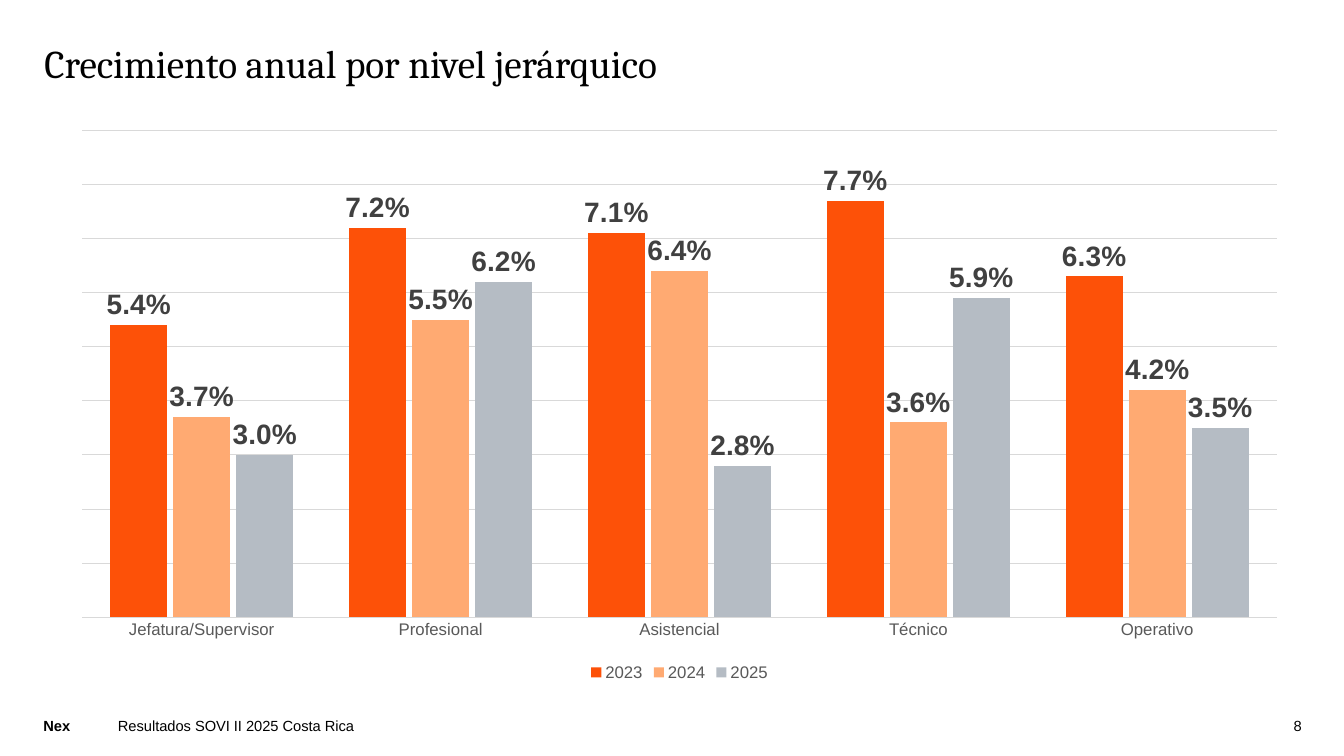
"""Build the slide on yearly growth by job level."""
from dataclasses import dataclass

import pptx
import pptx.chart.chart
import pptx.chart.data
import pptx.dml.color
import pptx.enum.chart
import pptx.enum.text
import pptx.oxml
import pptx.oxml.ns
import pptx.slide
import pptx.text.text
import pptx.util

RGBColor = pptx.dml.color.RGBColor
BLACK = RGBColor(0x00, 0x00, 0x00)
LABEL_GRAY = RGBColor(0x40, 0x40, 0x40)
AXIS_GRAY = RGBColor(0x59, 0x59, 0x59)
GRID_GRAY = RGBColor(0xD9, 0xD9, 0xD9)
ORANGE = RGBColor(0xFD, 0x51, 0x08)
PEACH = RGBColor(0xFF, 0xAA, 0x72)
SILVER = RGBColor(0xB5, 0xBC, 0xC4)

SLIDE_WIDTH = pptx.util.Inches(13.33)
SLIDE_HEIGHT = pptx.util.Inches(7.5)
COLUMN = SLIDE_WIDTH / 100
ROW = SLIDE_HEIGHT / 100
FOOTER_ROW, FOOTER_ROWS = 94.8, 2.4
PERCENT_FORMAT = "0.0%"

Align = pptx.enum.text.PP_ALIGN
Anchor = pptx.enum.text.MSO_ANCHOR


@dataclass(frozen=True)
class Area:
    column: float
    row: float
    columns: float
    rows: float

    def box(self) -> tuple[int, int, int, int]:
        return (round(self.column * COLUMN), round(self.row * ROW),
                round(self.columns * COLUMN), round(self.rows * ROW))


@dataclass(frozen=True)
class Label:
    text: str
    area: Area
    size: float = 10.5
    font: str = "Arial"
    bold: bool = False
    anchor: Anchor = Anchor.BOTTOM
    align: Align = Align.LEFT
    line_spacing: float = 1.0


@dataclass(frozen=True)
class YearSeries:
    year: str
    growth: tuple[float, ...]
    color: RGBColor


LABELS = (
    Label("Nex", Area(3.23, FOOTER_ROW, 3.53, FOOTER_ROWS), bold=True, anchor=Anchor.TOP),
    Label("Crecimiento anual por nivel jerárquico", Area(3.3, 5.87, 93.55, 13.33),
          size=28, font="Cambria", anchor=Anchor.TOP, line_spacing=0.9),
    Label("Resultados SOVI II 2025 Costa Rica", Area(8.78, FOOTER_ROW, 72.32, FOOTER_ROWS)),
    Label("8", Area(94.37, FOOTER_ROW, 2.48, FOOTER_ROWS), align=Align.RIGHT),
)
CHART_AREA = Area(4.28, 15.73, 92.57, 74.93)
PLOT_SHARES = {"x": 0.02, "y": 0.02, "w": 0.96, "h": 0.86}
LEVELS = ("Jefatura/Supervisor", "Profesional", "Asistencial", "Técnico", "Operativo")
YEARS = (
    YearSeries("2023", (0.054, 0.072, 0.071, 0.077, 0.063), ORANGE),
    YearSeries("2024", (0.037, 0.055, 0.064, 0.036, 0.042), PEACH),
    YearSeries("2025", (0.03, 0.062, 0.028, 0.059, 0.035), SILVER),
)


def style_font(font: pptx.text.text.Font, size: float, color: RGBColor,
               name: str = "Arial", bold: bool = False) -> None:
    font.name = name
    font.size = pptx.util.Pt(size)
    font.bold = bold
    font.color.rgb = color


def add_label(slide: pptx.slide.Slide, label: Label) -> None:
    text_frame = slide.shapes.add_textbox(*label.area.box()).text_frame
    text_frame.margin_left = text_frame.margin_right = 0
    text_frame.margin_top = text_frame.margin_bottom = 0
    text_frame.word_wrap = True
    text_frame.vertical_anchor = label.anchor
    text_frame.text = label.text
    paragraph = text_frame.paragraphs[0]
    paragraph.alignment = label.align
    paragraph.line_spacing = label.line_spacing
    style_font(paragraph.runs[0].font, label.size, BLACK, label.font, label.bold)


def place_plot(chart: pptx.chart.chart.Chart) -> None:
    plot_area = chart.plots[0]._element.getparent()
    for layout in plot_area.findall(pptx.oxml.ns.qn("c:layout")):
        plot_area.remove(layout)
    modes = "".join(f'<c:{axis}Mode val="edge"/>' for axis in "xy")
    shares = "".join(f'<c:{side} val="{share}"/>' for side, share in PLOT_SHARES.items())
    plot_area.insert(0, pptx.oxml.parse_xml(
        f'<c:layout {pptx.oxml.ns.nsdecls("c")}><c:manualLayout>'
        f'<c:layoutTarget val="inner"/>{modes}{shares}</c:manualLayout></c:layout>'))


def style_axes(chart: pptx.chart.chart.Chart) -> None:
    level_axis, growth_axis = chart.category_axis, chart.value_axis
    level_axis.major_tick_mark = pptx.enum.chart.XL_TICK_MARK.NONE
    style_font(level_axis.tick_labels.font, 12, AXIS_GRAY)
    growth_axis.minimum_scale, growth_axis.maximum_scale = 0, 0.09
    growth_axis.major_unit = 0.01
    growth_axis.tick_labels.number_format = PERCENT_FORMAT
    growth_axis.tick_labels.number_format_is_linked = False
    growth_axis.visible = False
    for line in (level_axis.format.line, growth_axis.major_gridlines.format.line):
        line.color.rgb = GRID_GRAY
        line.width = pptx.util.Pt(0.75)


def add_growth_chart(slide: pptx.slide.Slide) -> None:
    chart_data = pptx.chart.data.CategoryChartData(number_format=PERCENT_FORMAT)
    chart_data.categories = LEVELS
    for entry in YEARS:
        chart_data.add_series(entry.year, entry.growth)
    chart = slide.shapes.add_chart(pptx.enum.chart.XL_CHART_TYPE.COLUMN_CLUSTERED,
                                   *CHART_AREA.box(), chart_data).chart
    style_font(chart.font, 10, BLACK)
    chart.has_title = False
    chart.has_legend = True
    chart.legend.position = pptx.enum.chart.XL_LEGEND_POSITION.BOTTOM
    chart.legend.include_in_layout = False
    style_font(chart.legend.font, 12, AXIS_GRAY)
    plot = chart.plots[0]
    plot.gap_width, plot.overlap = 97, -10
    plot.vary_by_categories = False
    for series, entry in zip(plot.series, YEARS):
        series.format.fill.solid()
        series.format.fill.fore_color.rgb = entry.color
        series.invert_if_negative = False
        labels = series.data_labels
        labels.show_value = True
        labels.position = pptx.enum.chart.XL_LABEL_POSITION.OUTSIDE_END
        labels.number_format = PERCENT_FORMAT
        labels.number_format_is_linked = False
        style_font(labels.font, 20, LABEL_GRAY, bold=True)
    style_axes(chart)
    place_plot(chart)


def main() -> None:
    presentation = pptx.Presentation()
    presentation.slide_width = SLIDE_WIDTH
    presentation.slide_height = SLIDE_HEIGHT
    slide = presentation.slides.add_slide(presentation.slide_layouts[6])
    for label in LABELS:
        add_label(slide, label)
    add_growth_chart(slide)
    presentation.save("out.pptx")


if __name__ == "__main__":
    main()
